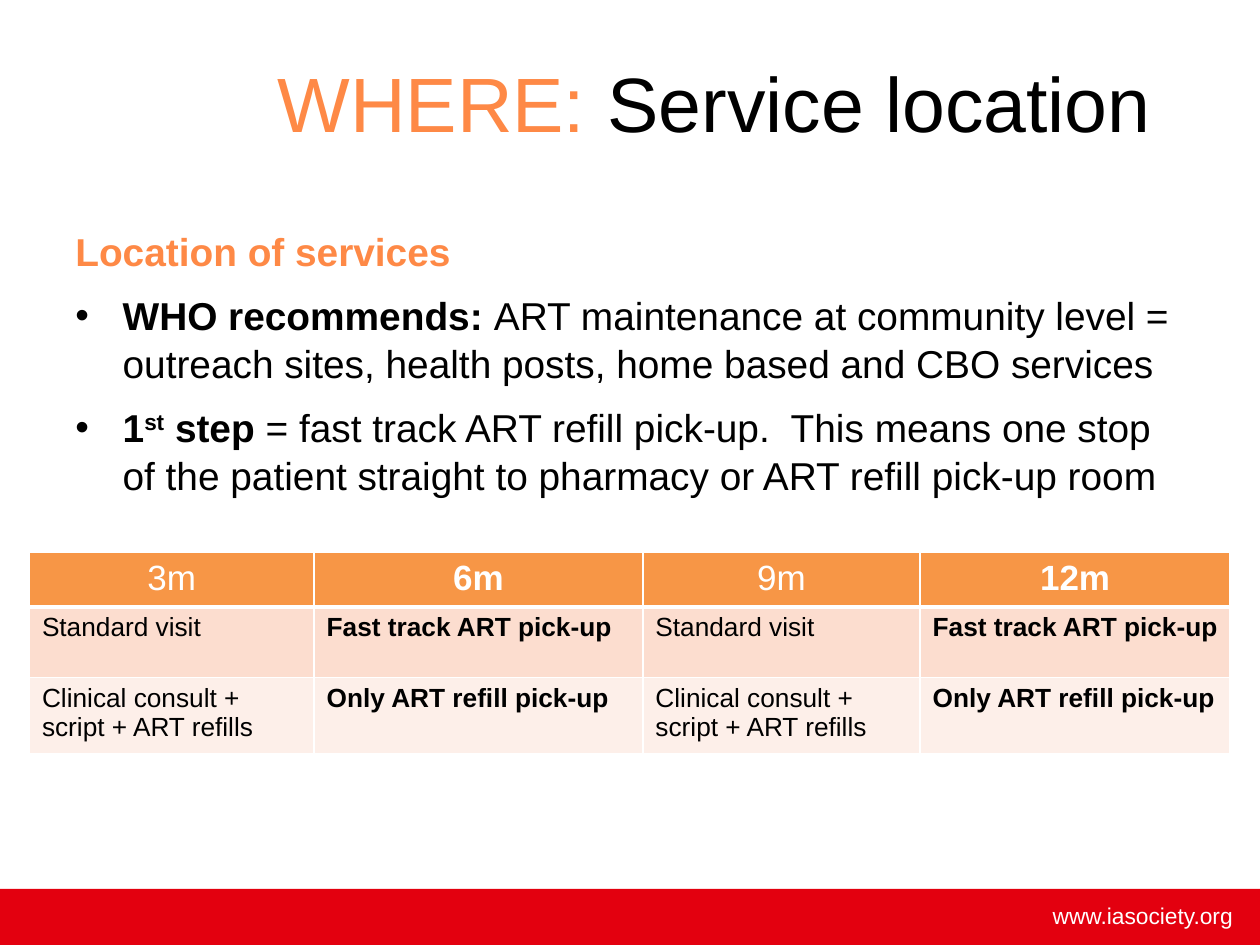
from dataclasses import dataclass
from lxml.etree import SubElement
from pptx import Presentation
from pptx.dml.color import RGBColor
from pptx.enum.shapes import MSO_SHAPE
from pptx.enum.text import MSO_ANCHOR, PP_ALIGN
from pptx.oxml.ns import qn
from pptx.util import Pt


@dataclass(frozen=True)
class Theme:
    font: str = "Arial"
    ink: str = "000000"
    white: str = "FFFFFF"
    accent: str = "FE8946"
    red: str = "E3000F"
    head: str = "F79646"
    bands: tuple = ("FCDDCF", "FDEFE9")
    title: float = 44
    body: float = 22.2
    label: float = 20
    cell: float = 15
    foot: float = 13


def apply(item, values):
    for key, value in values.items():
        setattr(item, key, value)


class Deck:
    def __init__(self, theme):
        self.theme = theme
        self.show = Presentation()
        apply(self.show, {"slide_width": Pt(720), "slide_height": Pt(540)})
        self.slide = self.show.slides.add_slide(self.show.slide_layouts[5])

    def fill_in(self, para, runs, size, color, **form):
        apply(para, form)
        for text, look in runs:
            look = dict(look)
            tint = look.pop("color", color)
            base = look.pop("base", None)
            run = para.add_run()
            run.text = text
            apply(run.font, {"name": self.theme.font, "size": Pt(size), "bold": False, **look})
            run.font.color.rgb = RGBColor.from_string(tint)
            if base:
                run._r.get_or_add_rPr().set("baseline", str(base * 1000))

    def paint(self, item, color):
        item.fill.solid()
        item.fill.fore_color.rgb = RGBColor.from_string(color)

    def title(self, box, runs):
        shape = self.slide.shapes.title
        apply(shape, dict(zip(("left", "top", "width", "height"), map(Pt, box))))
        apply(shape.text_frame, {"word_wrap": True, "vertical_anchor": MSO_ANCHOR.MIDDLE})
        self.fill_in(shape.text_frame.paragraphs[0], runs, self.theme.title,
                     self.theme.ink, alignment=PP_ALIGN.CENTER)

    def bar(self, box, color):
        shape = self.slide.shapes.add_shape(MSO_SHAPE.RECTANGLE, *map(Pt, box))
        shape.shadow.inherit = False
        self.paint(shape, color)
        shape.line.fill.background()

    def text(self, box, paras, size, color, **form):
        frame = self.slide.shapes.add_textbox(*map(Pt, box)).text_frame
        frame.word_wrap = True
        for at, (runs, dot) in enumerate(paras):
            para = frame.add_paragraph() if at else frame.paragraphs[0]
            if dot:
                self.bullet(para)
            gap = {"space_before": Pt(9)} if at else {}
            self.fill_in(para, runs, size, color, **gap, **form)

    def bullet(self, para):
        props = para._p.get_or_add_pPr()
        props.set("marL", str(Pt(27)))
        props.set("indent", str(Pt(-27)))
        SubElement(props, qn("a:buFont"), typeface=self.theme.font)
        SubElement(props, qn("a:buChar"), char="•")

    def border(self, cell, widths):
        props = cell._tc.get_or_add_tcPr()
        for side, width in widths.items():
            line = SubElement(props, qn(f"a:ln{side}"), w=str(Pt(width)))
            fill = SubElement(line, qn("a:solidFill"))
            SubElement(fill, qn("a:srgbClr"), val=self.theme.white)

    def table(self, left, top, cols, rows, data):
        look = self.theme
        box = (left, top, sum(cols), sum(rows))
        grid = self.slide.shapes.add_table(len(rows), len(cols), *map(Pt, box)).table
        for col, width in zip(grid.columns, cols):
            col.width = Pt(width)
        for row, (high, texts) in enumerate(zip(rows, data)):
            grid.rows[row].height = Pt(high)
            head = row == 0
            size, color = (look.label, look.white) if head else (look.cell, look.ink)
            side = PP_ALIGN.CENTER if head else PP_ALIGN.LEFT
            for col, text in enumerate(texts):
                cell = grid.cell(row, col)
                self.border(cell, {"L": 1, "R": 1, "T": 3 if row == 1 else 1, "B": 3 if head else 1})
                self.paint(cell, look.head if head else look.bands[row - 1])
                self.fill_in(cell.text_frame.paragraphs[0], [(text, {"bold": col % 2 == 1})],
                             size, color, alignment=side)


def main():
    look = Theme()
    deck = Deck(look)
    bold = {"bold": True}
    tint = {"color": look.accent}
    deck.bar((0, 508, 720, 32), look.red)
    deck.text((473, 512, 238.4, 23), [([("www.iasociety.org", {})], False)],
              look.foot, look.white, alignment=PP_ALIGN.RIGHT)
    deck.title((116, 13, 584.6, 90), [("WHERE: ", tint), ("Service location", {})])
    deck.text((36, 126, 648, 189.4), [
        ([("Location of services", {**bold, **tint})], False),
        ([("WHO recommends: ", bold),
          ("ART maintenance at community level = outreach sites, health posts, "
           "home based and CBO services", {})], True),
        ([("1", bold), ("st", {**bold, "base": 30}), (" step ", bold),
          ("= fast track ART refill pick-up.  This means one stop of the patient "
           "straight to pharmacy or ART refill pick-up room", {})], True),
    ], look.body, look.ink, line_spacing=1.03)
    deck.table(16.8, 315.6, (162.7, 187.9, 158.4, 177.2), (29.2, 40.4, 40.4), [
        ("3m", "6m", "9m", "12m"),
        ("Standard visit", "Fast track ART pick-up") * 2,
        ("Clinical consult + script + ART refills", "Only ART refill pick-up") * 2,
    ])
    deck.show.save("out.pptx")


if __name__ == "__main__":
    main()
